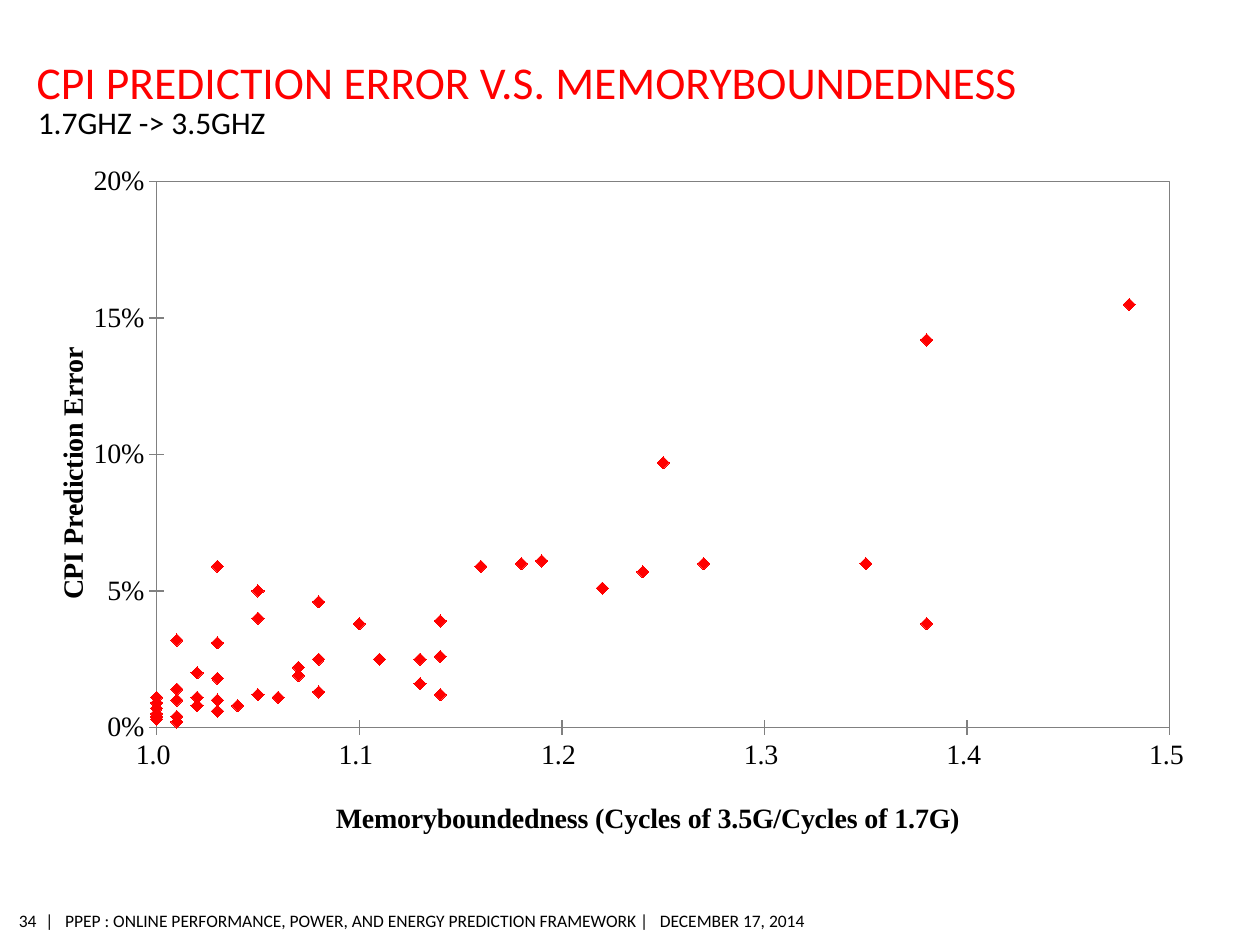
from lxml import etree
from pptx import Presentation
from pptx.chart.data import XyChartData
from pptx.dml.color import RGBColor
from pptx.enum.chart import XL_CHART_TYPE as ChartType, XL_MARKER_STYLE as Marker, XL_TICK_MARK as Tick
from pptx.enum.text import MSO_ANCHOR as Anchor, PP_ALIGN as Align
from pptx.oxml import parse_xml
from pptx.oxml.ns import nsdecls, qn
from pptx.util import Inches, Pt

COLORS = {"red": "FF0000", "black": "000000", "axis": "808080"}
TEXT_FONT, CHART_FONT = "Calibri", "Times New Roman"

# text, (left, top, width, height), size, colour, anchor, alignment, (top, bottom) inset, wrap
TEXTS = [
    ("CPI PREDICTION ERROR V.S. MEMORYBOUNDEDNESS", (0.29, 0.34, 8.4, 0.52),
     26, "red", Anchor.BOTTOM, Align.LEFT, (0.05, 0), True),
    ("1.7GHZ -> 3.5GHZ", (0.3, 0.82, 8.4, 0.31),
     18, "black", Anchor.TOP, Align.LEFT, (0, 0), True),
    ("34", (0.13, 7.18, 0.16, 0.26),
     10, "black", Anchor.MIDDLE, Align.RIGHT, (0.04, 0.04), False),
    ("|   PPEP : ONLINE PERFORMANCE, POWER, AND ENERGY PREDICTION FRAMEWORK |   DECEMBER 17, 2014",
     (0.36, 7.18, 6.11, 0.26),
     10, "black", Anchor.MIDDLE, Align.LEFT, (0.04, 0.04), False),
]

CHART_BOX = (0.29, 1.14, 9.34, 5.59)
PLOT_BOX = (0.102, 0.054, 0.861, 0.775)  # fractions of the chart
MEMORYBOUNDEDNESS = [
    1, 1, 1.07, 1.02, 1.03, 1, 1.02, 1, 1.01, 1.03, 1.38, 1.05, 1.18, 1.06, 1.11, 1.08, 1, 1.08,
    1.05, 1.22, 1.13, 1.19, 1.16, 1.02, 1.01, 1.14, 1.08, 1, 1.35, 1.48, 1.1, 1, 1.04, 1.25, 1,
    1.02, 1.01, 1.24, 0.99, 1.01, 1.03, 1.03, 1.14, 1.38, 1, 1.01, 1.13, 1.27, 1.07, 1.05, 1.03, 1.14,
]
PREDICTION_ERROR = [
    0.009, 0.007, 0.019, 0.02, 0.01, 0.011, 0.011, 0.004, 0.01, 0.018, 0.038, 0.04, 0.06, 0.011,
    0.025, 0.025, 0.005, 0.046, 0.05, 0.051, 0.016, 0.061, 0.059, 0.008, 0.014, 0.039, 0.013, 0.003,
    0.06, 0.155, 0.038, 0.004, 0.008, 0.097, 0.004, 0.008, 0.032, 0.057, 0.01, 0.002, 0.031, 0.006,
    0.012, 0.142, 0.004, 0.004, 0.025, 0.06, 0.022, 0.012, 0.059, 0.026,
]
# title, title position as fractions of the chart, minimum, maximum, major unit, number format
X_AXIS = ("Memoryboundedness (Cycles of 3.5G/Cycles of 1.7G)", (0.25, 0.925), 1, 1.5, 0.1, "0.0_ ")
Y_AXIS = ("CPI Prediction Error", (0.011, 0.282), 0, 0.2, 0.05, "0%")


def color(name):
    return RGBColor.from_string(COLORS[name])


def style_font(font, name, size, color_name, bold=False):
    font.name, font.size, font.bold = name, Pt(size), bold
    font.color.rgb = color(color_name)


def add_text(slide, text, box, size, color_name, anchor, alignment, insets, wrap):
    frame = slide.shapes.add_textbox(*map(Inches, box)).text_frame
    frame.text = text
    frame.word_wrap = wrap
    frame.vertical_anchor = anchor
    frame.margin_left = frame.margin_right = 0
    frame.margin_top, frame.margin_bottom = map(Inches, insets)
    paragraph = frame.paragraphs[0]
    paragraph.alignment = alignment
    style_font(paragraph.runs[0].font, TEXT_FONT, size, color_name)


def set_layout(element, index, fractions, target=None):
    """Give a chart part a manual layout, placed as child number index."""
    for old in element.findall(qn("c:layout")):
        element.remove(old)
    layout = parse_xml(f"<c:layout {nsdecls('c')}><c:manualLayout/></c:layout>")
    settings = [("layoutTarget", target)] if target else []
    settings += [("xMode", "edge"), ("yMode", "edge"), *zip("xywh", fractions)]
    for tag, value in settings:
        etree.SubElement(layout[0], qn(f"c:{tag}")).set("val", str(value))
    element.insert(index, layout)


def style_axis(axis, title, position, minimum, maximum, unit, number_format):
    axis.minimum_scale, axis.maximum_scale, axis.major_unit = minimum, maximum, unit
    axis.has_major_gridlines = False
    axis.major_tick_mark = Tick.CROSS
    axis.tick_labels.number_format = number_format
    axis.tick_labels.number_format_is_linked = False
    style_font(axis.tick_labels.font, CHART_FONT, 16, "black")
    axis.format.line.color.rgb = color("axis")
    frame = axis.axis_title.text_frame
    frame.text = title
    style_font(frame.paragraphs[0].runs[0].font, CHART_FONT, 16, "black", bold=True)
    set_layout(axis.axis_title._element, 1, position)


def add_scatter(slide):
    data = XyChartData()
    points = data.add_series("Series 1")
    for x, y in zip(MEMORYBOUNDEDNESS, PREDICTION_ERROR):
        points.add_data_point(x, y)
    chart = slide.shapes.add_chart(ChartType.XY_SCATTER, *map(Inches, CHART_BOX), data).chart
    chart.has_title = chart.has_legend = False
    style_font(chart.font, CHART_FONT, 16, "black")
    style_axis(chart.category_axis, *X_AXIS)
    style_axis(chart.value_axis, *Y_AXIS)

    plot = chart.plots[0]
    plot.vary_by_categories = False
    series = plot.series[0]
    series.smooth = False
    series.format.line.fill.background()
    marker = series.marker
    marker.style, marker.size = Marker.DIAMOND, 7
    for fill in (marker.format.fill, marker.format.line.fill):
        fill.solid()
        fill.fore_color.rgb = color("red")

    plot_area = chart._chartSpace.chart.plotArea
    set_layout(plot_area, 0, PLOT_BOX, "inner")
    plot_area.append(parse_xml(
        f'<c:spPr {nsdecls("c", "a")}><a:noFill/><a:ln w="9525"><a:solidFill>'
        f'<a:srgbClr val="{COLORS["axis"]}"/></a:solidFill></a:ln></c:spPr>'))


def main():
    presentation = Presentation()
    presentation.slide_width, presentation.slide_height = Inches(10), Inches(7.5)
    slide = presentation.slides.add_slide(presentation.slide_layouts[6])
    for text in TEXTS:
        add_text(slide, *text)
    add_scatter(slide)
    presentation.save("out.pptx")


if __name__ == "__main__":
    main()
